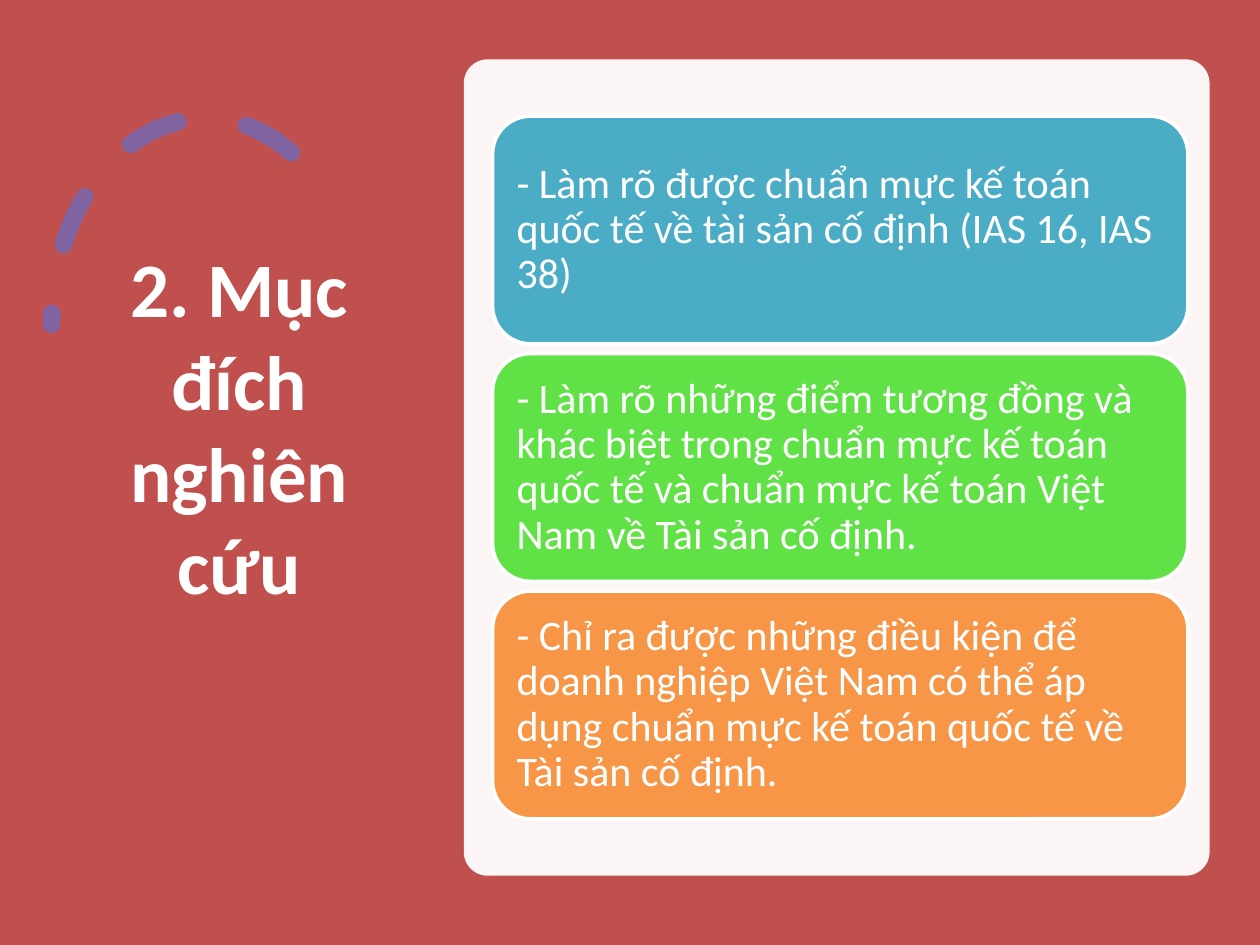
from dataclasses import dataclass

from lxml import etree
from pptx import Presentation
from pptx.dml.color import RGBColor
from pptx.enum.dml import MSO_LINE_DASH_STYLE as Dash
from pptx.enum.shapes import MSO_SHAPE as Preset
from pptx.enum.text import MSO_ANCHOR as Anchor, PP_ALIGN as Align
from pptx.oxml.ns import qn
from pptx.shapes.autoshape import Shape
from pptx.slide import Slide
from pptx.text.text import TextFrame
from pptx.util import Pt

FONT = "Calibri"
WHITE = RGBColor(0xFF, 0xFF, 0xFF)
RED = RGBColor(0xC0, 0x50, 0x4D)
PURPLE = RGBColor(0x80, 0x64, 0xA2)
TEAL = RGBColor(0x4B, 0xAC, 0xC6)
GREEN = RGBColor(0x60, 0xE1, 0x46)
ORANGE = RGBColor(0xF7, 0x96, 0x46)


@dataclass(frozen=True)
class Area:
    """A place on the slide, in points."""
    left: float
    top: float
    width: float
    height: float


@dataclass(frozen=True)
class Card:
    text: str
    color: RGBColor


SLIDE = Area(0, 0, 720, 540)
ARC = Area(29.5, 67.7, 176.4, 235.4)
TITLE = Area(49.7, 50.4, 174.2, 438.5)
PANEL = Area(265, 33.9, 426.2, 466.5)
FIRST_CARD = Area(281.5, 66.4, 397.3, 130.1)
CARD_PITCH = 135.7
CARD_INSET = 7.3
TITLE_LIFT = 53  # one title line of room below the text

CARDS = (
    Card("- Làm rõ được chuẩn mực kế toán quốc tế về tài sản cố định "
         "(IAS 16, IAS 38)", TEAL),
    Card("- Làm rõ những điểm tương đồng và khác biệt trong chuẩn mực kế toán "
         "quốc tế và chuẩn mực kế toán Việt Nam về Tài sản cố định.", GREEN),
    Card("- Chỉ ra được những điều kiện để doanh nghiệp Việt Nam có thể áp dụng "
         "chuẩn mực kế toán quốc tế về Tài sản cố định.", ORANGE),
)


def place(area: Area) -> tuple[Pt, Pt, Pt, Pt]:
    return Pt(area.left), Pt(area.top), Pt(area.width), Pt(area.height)


def add_filled(page: Slide, preset: Preset, area: Area, color: RGBColor) -> Shape:
    """Add a flat shape without an outline."""
    shape = page.shapes.add_shape(preset, *place(area))
    shape.shadow.inherit = False
    shape.fill.solid()
    shape.fill.fore_color.rgb = color
    shape.line.fill.background()
    return shape


def write(frame: TextFrame, text: str, size: float, align: Align,
          bold: bool = False, spacing: float = 1.0) -> None:
    frame.word_wrap = True
    frame.vertical_anchor = Anchor.MIDDLE
    frame.text = text
    para = frame.paragraphs[0]
    para.alignment = align
    para.line_spacing = spacing
    font = para.runs[0].font
    font.name, font.size, font.bold = FONT, Pt(size), bold
    font.color.rgb = WHITE


def add_arc(page: Slide) -> None:
    arc = page.shapes.add_shape(Preset.ARC, *place(ARC))
    arc.shadow.inherit = False
    arc.adjustments[0] = 146.129
    arc.adjustments[1] = 0
    arc.fill.background()
    arc.line.color.rgb = PURPLE
    arc.line.width = Pt(10)
    arc.line.dash_style = Dash.DASH
    properties = arc.element.spPr
    properties.find(qn("a:xfrm")).set("flipH", "1")
    properties.find(qn("a:ln")).set("cap", "rnd")


def add_title(page: Slide) -> None:
    box = page.shapes.add_textbox(*place(TITLE))
    write(box.text_frame, "2. Mục đích nghiên cứu", 44, Align.CENTER, bold=True)
    box.text_frame.margin_bottom = Pt(3.6 + TITLE_LIFT)


def add_panel(page: Slide) -> None:
    panel = add_filled(page, Preset.ROUNDED_RECTANGLE, PANEL, WHITE)
    panel.adjustments[0] = 0.032
    color = panel.element.spPr.find(qn("a:solidFill"))[0]
    etree.SubElement(color, qn("a:alpha")).set("val", "95000")


def add_card(page: Slide, card: Card, index: int) -> None:
    area = Area(FIRST_CARD.left, FIRST_CARD.top + index * CARD_PITCH,
                FIRST_CARD.width, FIRST_CARD.height)
    shape = add_filled(page, Preset.ROUNDED_RECTANGLE, area, card.color)
    shape.line.color.rgb = WHITE
    shape.line.width = Pt(2)
    frame = shape.text_frame
    frame.margin_left = frame.margin_right = Pt(CARD_INSET)
    frame.margin_top = frame.margin_bottom = Pt(CARD_INSET)
    write(frame, card.text, 24, Align.LEFT, spacing=0.9)


def main() -> None:
    deck = Presentation()
    deck.slide_width, deck.slide_height = Pt(SLIDE.width), Pt(SLIDE.height)
    page = deck.slides.add_slide(deck.slide_layouts[6])

    # Backdrop and title side
    add_filled(page, Preset.RECTANGLE, SLIDE, RED)
    add_arc(page)
    add_title(page)

    # Panel with the research aims
    add_panel(page)
    for index, card in enumerate(CARDS):
        add_card(page, card, index)

    deck.save("out.pptx")


if __name__ == "__main__":
    main()
